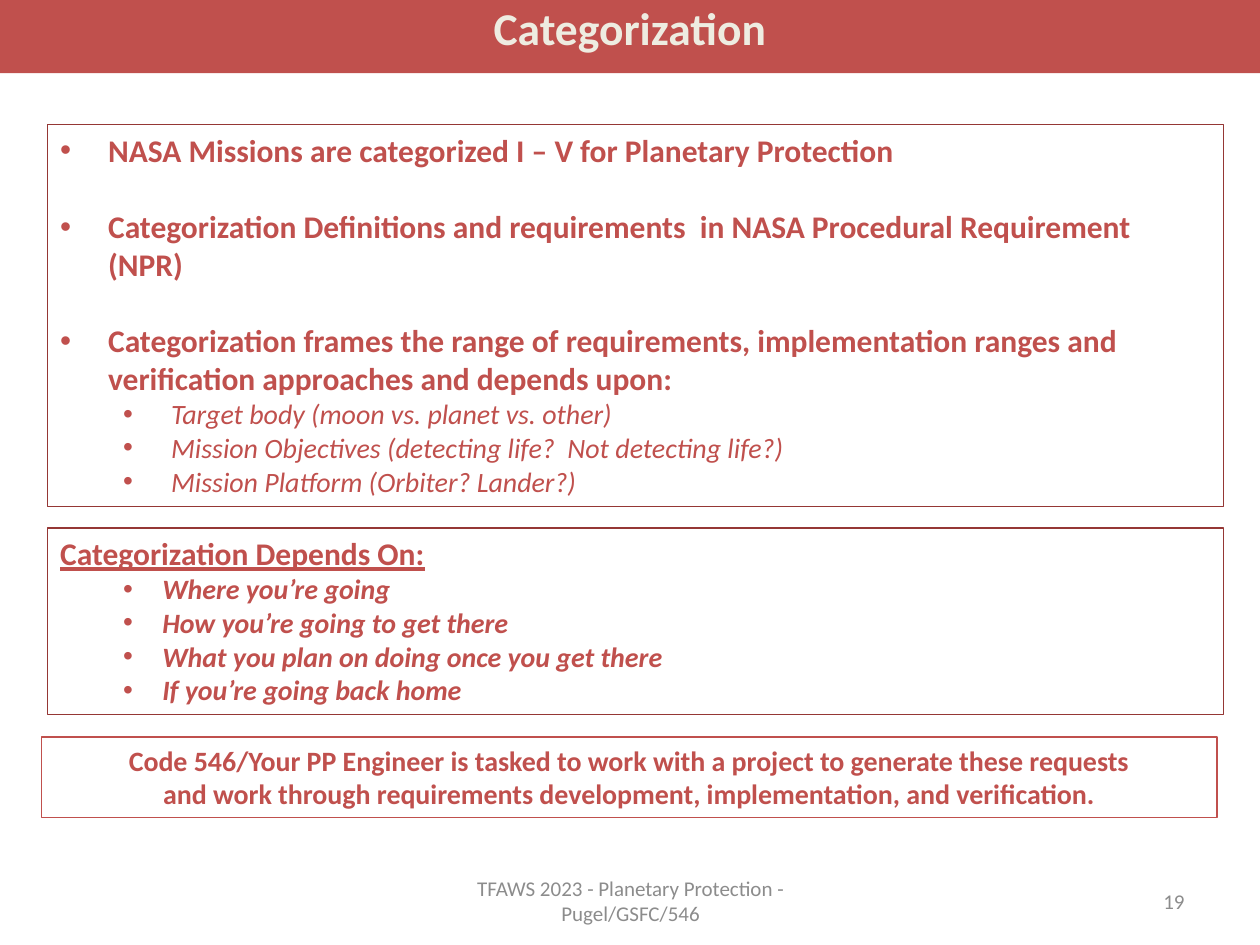
from dataclasses import dataclass

from lxml.etree import SubElement
from pptx import Presentation
from pptx.dml.color import RGBColor
from pptx.enum.shapes import MSO_SHAPE
from pptx.enum.text import MSO_ANCHOR, PP_ALIGN
from pptx.oxml.ns import qn
from pptx.util import Inches, Pt


@dataclass(frozen=True)
class Theme:
    font: str = "Calibri"
    red: RGBColor = RGBColor(0xC0, 0x50, 0x4D)
    dark_red: RGBColor = RGBColor(0x95, 0x37, 0x35)
    cream: RGBColor = RGBColor(0xEE, 0xEC, 0xE1)
    gray: RGBColor = RGBColor(0x8C, 0x8C, 0x8C)
    title: int = 26
    heading: int = 18
    detail: int = 16
    footer: int = 12


theme = Theme()
presentation = Presentation()
presentation.slide_width = Inches(10)
presentation.slide_height = Inches(7.5)
slide = presentation.slides.add_slide(presentation.slide_layouts[6])


def add_box(left, top, width, height, line=None, fill=None, anchor=MSO_ANCHOR.TOP):
    """Add a rectangle and return its text frame."""
    shape = slide.shapes.add_shape(
        MSO_SHAPE.RECTANGLE, Inches(left), Inches(top), Inches(width), Inches(height)
    )
    shape.shadow.inherit = False
    if fill is None:
        shape.fill.background()
    else:
        shape.fill.solid()
        shape.fill.fore_color.rgb = fill
    if line is None:
        shape.line.fill.background()
    else:
        shape.line.color.rgb = line
        shape.line.width = Pt(0.75)
    shape.text_frame.word_wrap = True
    shape.text_frame.vertical_anchor = anchor
    return shape.text_frame


def add_line(frame, text, size, color=theme.red, align=PP_ALIGN.LEFT, bold=False,
             italic=False, underline=False, level=0, indent=None, before=0):
    """Add a paragraph; indent is (text margin, bullet hang) in inches."""
    paragraph = frame.paragraphs[0]
    if paragraph.runs:
        paragraph = frame.add_paragraph()
    paragraph.alignment = align
    paragraph.level = level
    paragraph.space_before = Pt(before)
    run = paragraph.add_run()
    run.text = text
    run.font.name = theme.font
    run.font.size = Pt(size)
    run.font.color.rgb = color
    run.font.bold = bold
    run.font.italic = italic
    run.font.underline = underline
    if indent:
        margin, hang = indent
        properties = paragraph._p.get_or_add_pPr()
        properties.set("marL", str(Inches(margin)))
        properties.set("indent", str(Inches(-hang)))
        SubElement(properties, qn("a:buFont"), typeface="Arial")
        SubElement(properties, qn("a:buChar"), char="•")
    return paragraph


# Title band
title_frame = add_box(0, 0, 10, 0.58, fill=theme.red)
title = add_line(title_frame, "Categorization", theme.title, theme.cream,
                 PP_ALIGN.CENTER, bold=True)
title.line_spacing = 0.9

# Mission categories, one empty line's height apart
missions_frame = add_box(0.38, 0.99, 9.33, 3.03, line=theme.dark_red)
statements = [
    "NASA Missions are categorized I – V for Planetary Protection",
    "Categorization Definitions and requirements  in NASA Procedural Requirement (NPR)",
    "Categorization frames the range of requirements, implementation ranges and "
    "verification approaches and depends upon:",
]
for index, statement in enumerate(statements):
    add_line(missions_frame, statement, theme.heading, bold=True,
             indent=(0.38, 0.38), before=22 if index else 0)
for factor in [
    "Target body (moon vs. planet vs. other)",
    "Mission Objectives (detecting life?  Not detecting life?)",
    "Mission Platform (Orbiter? Lander?)",
]:
    add_line(missions_frame, factor, theme.detail, italic=True, level=1,
             indent=(0.88, 0.38))

# What categorization depends on
depends_frame = add_box(0.38, 4.19, 9.33, 1.48, line=theme.dark_red)
add_line(depends_frame, "Categorization Depends On:", theme.heading, bold=True,
         underline=True)
for question in [
    "Where you’re going",
    "How you’re going to get there",
    "What you plan on doing once you get there",
    "If you’re going back home",
]:
    add_line(depends_frame, question, theme.detail, bold=True, italic=True, level=1,
             indent=(0.81, 0.31))

# Engineer's task
task_frame = add_box(0.33, 5.85, 9.33, 0.64, line=theme.red)
for sentence_part in [
    "Code 546/Your PP Engineer is tasked to work with a project to generate these requests",
    "and work through requirements development, implementation, and verification.",
]:
    add_line(task_frame, sentence_part, theme.detail, align=PP_ALIGN.CENTER, bold=True)

# Footer and slide number
for left, width, text, align in [
    (3.42, 3.17, "TFAWS 2023 - Planetary Protection - Pugel/GSFC/546", PP_ALIGN.CENTER),
    (7.17, 2.33, "19", PP_ALIGN.RIGHT),
]:
    text_box = slide.shapes.add_textbox(
        Inches(left), Inches(6.95), Inches(width), Inches(0.4)
    )
    text_box.text_frame.word_wrap = True
    text_box.text_frame.vertical_anchor = MSO_ANCHOR.MIDDLE
    add_line(text_box.text_frame, text, theme.footer, theme.gray, align)

presentation.save("out.pptx")
